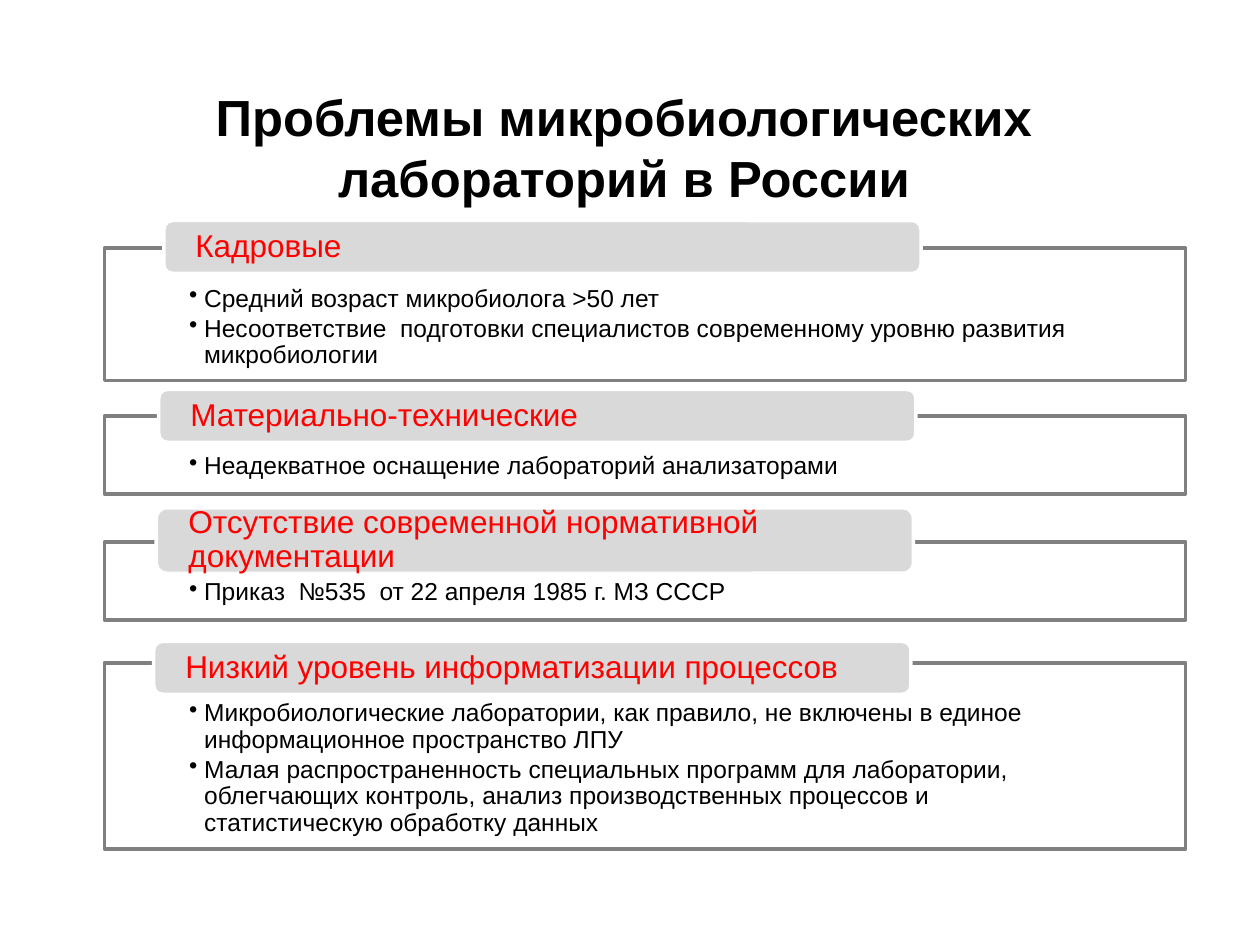
from dataclasses import dataclass

import pptx
import pptx.dml.color
import pptx.enum.shapes
import pptx.enum.text
import pptx.oxml.ns
import pptx.util
from lxml import etree
from pptx.dml.color import RGBColor
from pptx.util import Inches, Pt

BLACK = RGBColor(0x00, 0x00, 0x00)
WHITE = RGBColor(0xFF, 0xFF, 0xFF)
RED = RGBColor(0xFF, 0x00, 0x00)
GRAY = RGBColor(0x80, 0x80, 0x80)
LIGHT_GRAY = RGBColor(0xD9, 0xD9, 0xD9)
FONT = "Arial"
ALIGN = pptx.enum.text.PP_ALIGN
ANCHOR = pptx.enum.text.MSO_ANCHOR
SHAPE = pptx.enum.shapes.MSO_SHAPE
qn = pptx.oxml.ns.qn

FRAME_LEFT, FRAME_WIDTH = 0.83, 8.58
HEADING_WIDTH = 6.01


@dataclass(frozen=True)
class Problem:
    heading: str
    heading_left: float
    heading_top: float
    heading_height: float
    frame_top: float
    frame_height: float
    points: tuple[str, ...]


PROBLEMS = (
    Problem("Кадровые", 1.3, 1.75, 0.42, 1.97, 1.05, (
        "Средний возраст микробиолога >50 лет",
        "Несоответствие  подготовки специалистов современному уровню развития микробиологии",
    )),
    Problem("Материально-технические", 1.26, 3.09, 0.42, 3.3, 0.62, (
        "Неадекватное оснащение лабораторий анализаторами",
    )),
    Problem("Отсутствие современной нормативной документации", 1.24, 4.03, 0.52, 4.3, 0.62, (
        "Приказ  №535  от 22 апреля 1985 г. МЗ СССР",
    )),
    Problem("Низкий уровень информатизации процессов", 1.22, 5.09, 0.42, 5.26, 1.48, (
        "Микробиологические лаборатории, как правило, не включены в единое информационное пространство ЛПУ",
        "Малая распространенность специальных программ для лаборатории, облегчающих контроль, "
        "анализ производственных процессов и статистическую обработку данных",
    )),
)


def add_run(paragraph, text: str, size: float, color: RGBColor, bold: bool = False) -> None:
    run = paragraph.add_run()
    run.text = text
    run.font.name = FONT
    run.font.size = Pt(size)
    run.font.bold = bold
    run.font.color.rgb = color


def add_panel(slide, kind, box: tuple[float, ...], fill: RGBColor, line: RGBColor,
              insets: tuple[float, ...], anchor):
    panel = slide.shapes.add_shape(kind, *map(Inches, box))
    panel.shadow.inherit = False
    panel.fill.solid()
    panel.fill.fore_color.rgb = fill
    panel.line.color.rgb = line
    panel.line.width = Pt(2)
    frame = panel.text_frame
    frame.word_wrap = True
    frame.vertical_anchor = anchor
    frame.margin_left, frame.margin_top, frame.margin_right, frame.margin_bottom = map(Inches, insets)
    return panel


def add_points(slide, problem: Problem) -> None:
    box = (FRAME_LEFT, problem.frame_top, FRAME_WIDTH, problem.frame_height)
    panel = add_panel(slide, SHAPE.RECTANGLE, box, WHITE, GRAY, (0.67, 0.3, 0.67, 0.11), ANCHOR.TOP)
    fill_color = panel.fill._xPr.find(qn("a:solidFill"))[0]
    etree.SubElement(fill_color, qn("a:alpha")).set("val", "90000")
    frame = panel.text_frame
    for index, point in enumerate(problem.points):
        paragraph = frame.add_paragraph() if index else frame.paragraphs[0]
        properties = paragraph._p.get_or_add_pPr()
        properties.set("marL", str(Inches(0.12)))
        properties.set("indent", str(Inches(-0.12)))
        etree.SubElement(properties, qn("a:buChar")).set("char", "•")
        paragraph.level = 1
        paragraph.alignment = ALIGN.LEFT
        paragraph.line_spacing = 0.9
        paragraph.space_after = Pt(2.1)
        add_run(paragraph, point, 14, BLACK)


def add_heading(slide, problem: Problem) -> None:
    box = (problem.heading_left, problem.heading_top, HEADING_WIDTH, problem.heading_height)
    panel = add_panel(slide, SHAPE.ROUNDED_RECTANGLE, box, LIGHT_GRAY, WHITE, (0.23, 0, 0.23, 0), ANCHOR.MIDDLE)
    paragraph = panel.text_frame.paragraphs[0]
    paragraph.alignment = ALIGN.LEFT
    paragraph.line_spacing = 0.9
    add_run(paragraph, problem.heading, 18, RED)


def add_title(slide, text: str) -> None:
    title = slide.shapes.title
    title.left, title.top, title.width, title.height = map(Inches, (0.35, 0.63, 9.21, 1.08))
    frame = title.text_frame
    frame.word_wrap = True
    frame.auto_size = pptx.enum.text.MSO_AUTO_SIZE.NONE
    frame.vertical_anchor = ANCHOR.TOP
    paragraph = frame.paragraphs[0]
    paragraph.alignment = ALIGN.CENTER
    add_run(paragraph, text, 29, BLACK, bold=True)


def main() -> None:
    presentation = pptx.Presentation()
    presentation.slide_width = Inches(10)
    presentation.slide_height = Inches(7.5)
    slide = presentation.slides.add_slide(presentation.slide_layouts[5])
    add_title(slide, "Проблемы микробиологических лабораторий в России")
    for problem in PROBLEMS:
        add_points(slide, problem)
        add_heading(slide, problem)
    presentation.save("out.pptx")


if __name__ == "__main__":
    main()
